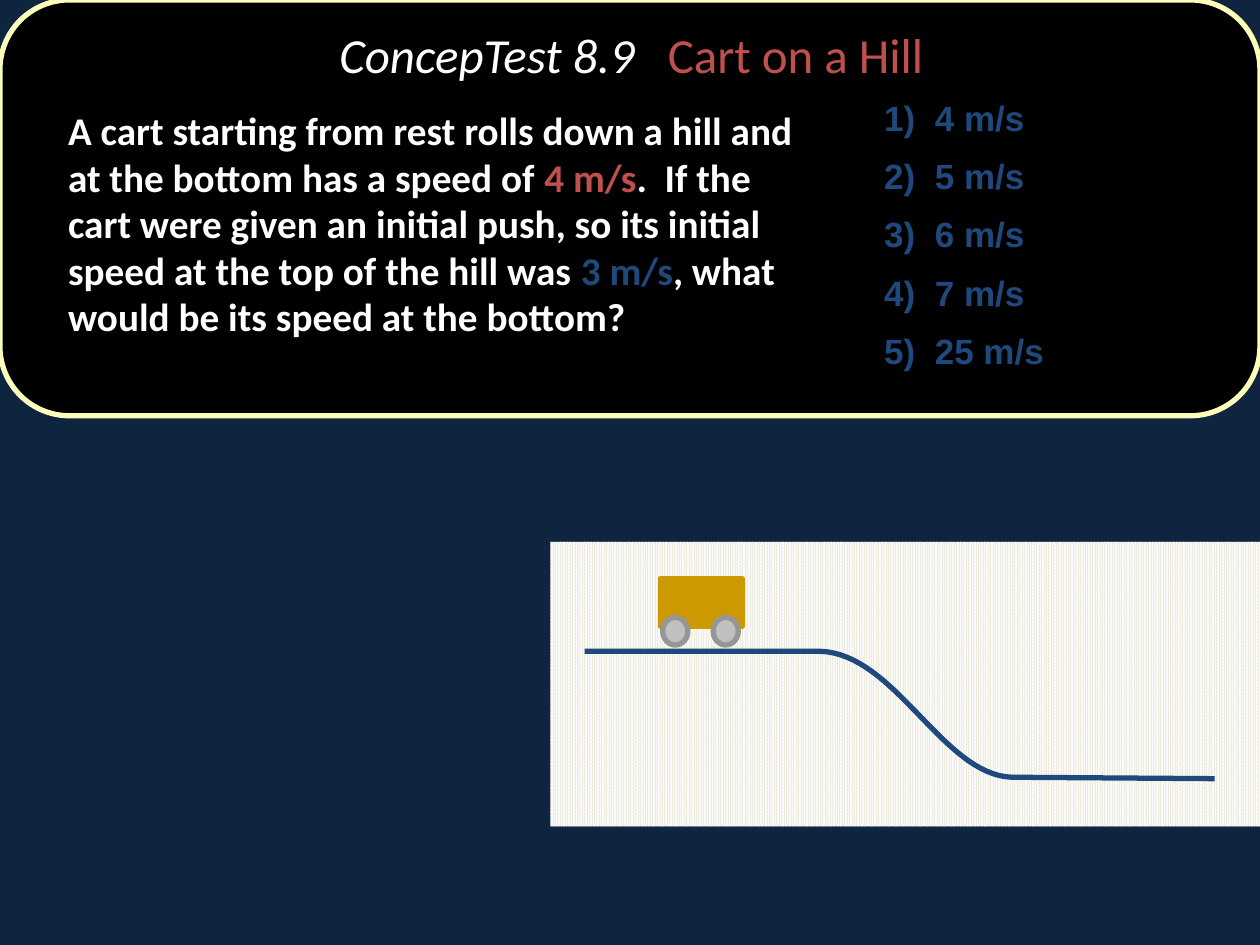
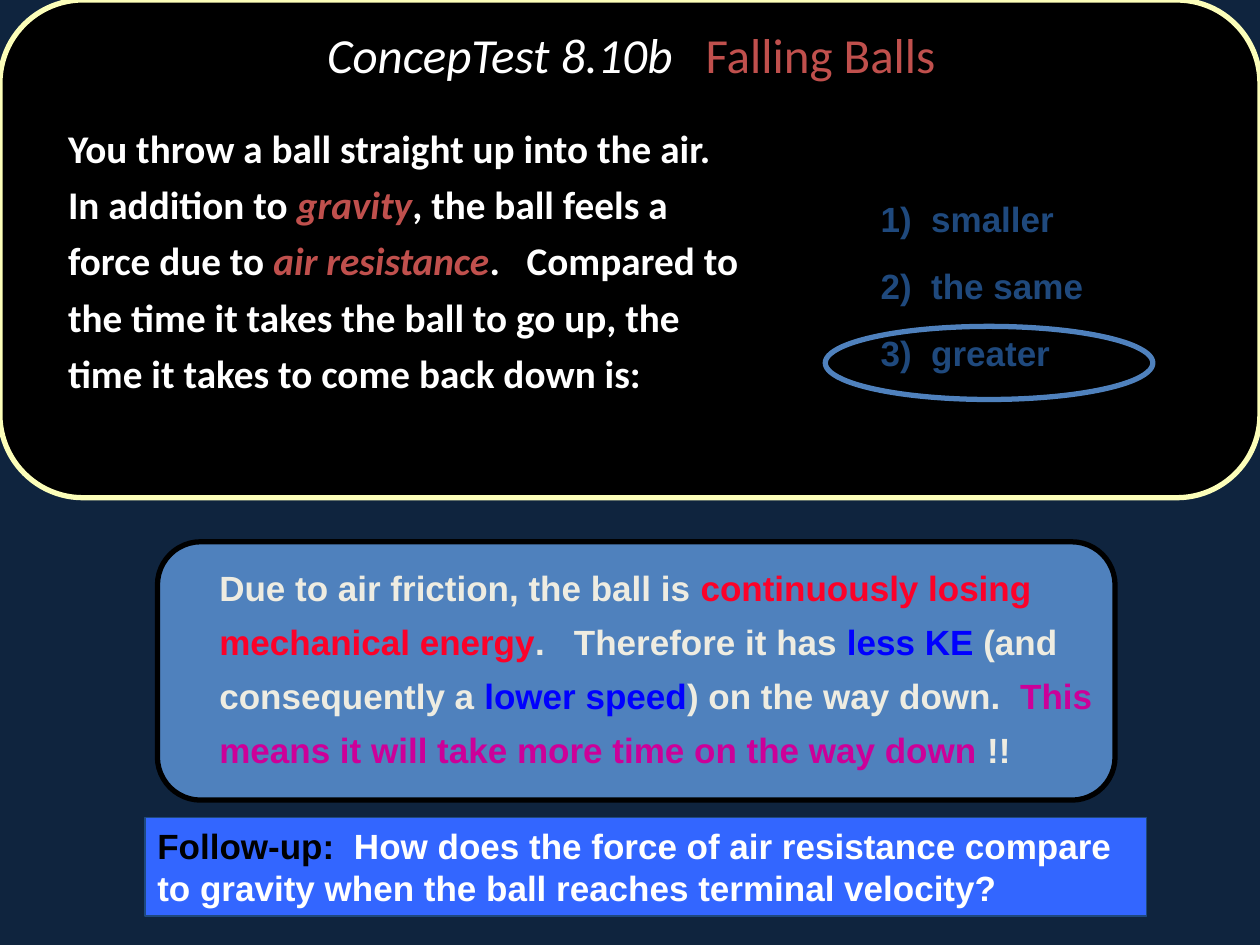
from pptx import Presentation
from pptx.dml.color import RGBColor
from pptx.enum.dml import MSO_PATTERN
from pptx.enum.shapes import MSO_SHAPE as SHAPE
from pptx.enum.text import MSO_ANCHOR as ANCHOR, PP_ALIGN as ALIGN
from pptx.util import Pt

NAVY = RGBColor(0x0F, 0x24, 0x3E)
BLACK = RGBColor(0x00, 0x00, 0x00)
WHITE = RGBColor(0xFF, 0xFF, 0xFF)
CREAM = RGBColor(0xEE, 0xEC, 0xE1)
PALE_YELLOW = RGBColor(0xFC, 0xFE, 0xB9)
BRICK = RGBColor(0xC0, 0x50, 0x4D)
DARK_BLUE = RGBColor(0x1F, 0x49, 0x7D)
MID_BLUE = RGBColor(0x4F, 0x81, 0xBD)
BRIGHT_BLUE = RGBColor(0x33, 0x66, 0xFF)
PURE_BLUE = RGBColor(0x00, 0x00, 0xFF)
RED = RGBColor(0xFC, 0x01, 0x28)
MAGENTA = RGBColor(0xCC, 0x00, 0x99)
GOLD = RGBColor(0xCC, 0x99, 0x00)
SILVER = RGBColor(0xC0, 0xC0, 0xC0)
GREY = RGBColor(0x96, 0x96, 0x96)


def draw(slide, kind, box, fill=None, line=None, weight=3):
    """Add a preset shape; box is left, top, width, height in points."""
    shape = slide.shapes.add_shape(kind, *map(Pt, box))
    shape.shadow.inherit = False
    if fill is None:
        shape.fill.background()
    else:
        shape.fill.solid()
        shape.fill.fore_color.rgb = fill
    if line is None:
        shape.line.fill.background()
    else:
        shape.line.color.rgb = line
        shape.line.width = Pt(weight)
    if kind == SHAPE.ROUNDED_RECTANGLE:
        shape.adjustments[0] = 0.167
    return shape


def write(shape, paragraphs, font, size, bold=True, align=ALIGN.LEFT,
          spacing=1.0, before=0, indent=0, anchor=ANCHOR.TOP):
    """Fill a shape with paragraphs of (text, colour, italic) runs."""
    frame = shape.text_frame
    frame.word_wrap = True
    frame.vertical_anchor = anchor
    frame.margin_left = Pt(7.2 + indent)
    for number, runs in enumerate(paragraphs):
        paragraph = frame.add_paragraph() if number else frame.paragraphs[0]
        paragraph.alignment = align
        paragraph.line_spacing = spacing
        paragraph.space_before = Pt(before)
        for text, colour, *italic in runs:
            run = paragraph.add_run()
            run.text = text
            run.font.name = font
            run.font.size = Pt(size)
            run.font.bold = bold
            run.font.italic = bool(italic)
            run.font.color.rgb = colour


prs = Presentation()
prs.slide_width, prs.slide_height = Pt(720), Pt(540)

# Each question: number, topic, panel height,
# question (box, line spacing, space before, runs),
# answers (box, line spacing, texts), circled answer
questions = [
    ("8.9", "Cart on a Hill", 237.6,
     ((0, 58.3, 464.4, 163.4), 0.99, 4.5, [
         ("A cart starting from rest rolls down a hill and at the bottom "
          "has a speed of ", WHITE),
         ("4 m/s", BRICK),
         (".  If the cart were given an initial push, so its initial speed "
          "at the top of the hill was ", WHITE),
         ("3 m/s", DARK_BLUE),
         (", what would be its speed at the bottom?", WHITE)]),
     ((498.2, 49, 187.9, 168.5), 1.1,
      ["4 m/s", "5 m/s", "6 m/s", "7 m/s", "25 m/s"]),
     None),
    ("8.10b", "Falling Balls", 284.4,
     ((0, 61.9, 433.4, 192.2), 1.2, 11.2, [
         ("You throw a ball straight up into the air.   In addition to ", WHITE),
         ("gravity", BRICK, True),
         (", the ball feels a force due to ", WHITE),
         ("air resistance", BRICK, True),
         (".   Compared to the time it takes the ball to go up, the time it "
          "takes to come back down is:", WHITE)]),
     ((496.1, 102.2, 164.2, 136.1), 1.3, ["smaller", "the same", "greater"]),
     (471.6, 186.5, 187.2, 41.8)),
]

# Shared part: background, panel, title, question and answers
slides = []
for number, topic, panel_height, question, answers, circle in questions:
    slide = prs.slides.add_slide(prs.slide_layouts[6])
    slides.append(slide)
    slide.background.fill.solid()
    slide.background.fill.fore_color.rgb = NAVY
    draw(slide, SHAPE.ROUNDED_RECTANGLE, (0, 0, 720, panel_height),
         BLACK, PALE_YELLOW)

    title = slide.shapes.add_textbox(Pt(73.4), Pt(0), Pt(574.6), Pt(66.2))
    write(title, [[(f"ConcepTest {number}   ", WHITE, True), (topic, BRICK)]],
          "Calibri", 28, bold=False, align=ALIGN.CENTER, spacing=0.9,
          anchor=ANCHOR.MIDDLE)

    box, spacing, before, runs = question
    write(slide.shapes.add_textbox(*map(Pt, box)), [runs], "Calibri", 22.4,
          spacing=spacing, before=before, indent=31.7)

    if circle:
        draw(slide, SHAPE.OVAL, circle, line=MID_BLUE)
    box, spacing, texts = answers
    write(slide.shapes.add_textbox(*map(Pt, box)),
          [[(f"{i})  {text}", DARK_BLUE)] for i, text in enumerate(texts, 1)],
          "Arial", 20, spacing=spacing, before=7)

hill_slide, ball_slide = slides

# Cart on a hill: patterned ground
ground = draw(hill_slide, SHAPE.RECTANGLE, (314.6, 309.6, 405.4, 162.7))
ground.fill.patterned()
ground.fill.pattern = MSO_PATTERN.PERCENT_90
ground.fill.fore_color.rgb = CREAM
ground.fill.back_color.rgb = WHITE

# Track: level, Bézier slope, level
slope = [(468.7, 372.2), (511.9, 373.7), (538.6, 442.8), (578.2, 444.2)]
track_points = []
STEPS = 32
for step in range(STEPS + 1):
    t = step / STEPS
    weights = ((1 - t) ** 3, 3 * t * (1 - t) ** 2, 3 * t ** 2 * (1 - t), t ** 3)
    track_points.append(tuple(
        Pt(sum(w * point[axis] for w, point in zip(weights, slope)))
        for axis in (0, 1)))
track_points.append((Pt(694.1), Pt(445)))
builder = hill_slide.shapes.build_freeform(Pt(334.1), Pt(372.2))
builder.add_line_segments(track_points, close=False)
track = builder.convert_to_shape()
track.shadow.inherit = False
track.fill.background()
track.line.color.rgb = DARK_BLUE
track.line.width = Pt(3)

# Cart with two wheels
draw(hill_slide, SHAPE.RECTANGLE, (377.3, 330.5, 46.8, 27.4), GOLD, GOLD)
for wheel_left in (378.7, 407.5):
    draw(hill_slide, SHAPE.OVAL, (wheel_left, 352.8, 14.4, 15.8), SILVER, GREY)

# Falling balls: explanation
draw(ball_slide, SHAPE.ROUNDED_RECTANGLE, (90, 309.6, 547.2, 147.6),
     MID_BLUE, BLACK)
explanation = ball_slide.shapes.add_textbox(Pt(95.8), Pt(313.2), Pt(555.1), Pt(175))
write(explanation, [[
    ("Due to air friction, the ball is ", CREAM),
    ("continuously losing mechanical energy", RED),
    (".   Therefore it has ", CREAM),
    ("less KE", PURE_BLUE),
    (" (and consequently a ", CREAM),
    ("lower speed", PURE_BLUE),
    (") on the way down.  ", CREAM),
    ("This means it will take more time on the way down", MAGENTA),
    (" !!", CREAM)]], "Arial", 20, spacing=1.29, before=7, indent=22.3)

# Falling balls: follow-up
follow_up = draw(ball_slide, SHAPE.RECTANGLE, (82.8, 467.3, 572.4, 56.2),
                 BRIGHT_BLUE, DARK_BLUE, 0.75)
write(follow_up, [[
    ("Follow-up:", BLACK),
    ("  How does the force of air resistance compare to gravity when the "
     "ball reaches terminal velocity?", WHITE)]],
    "Arial", 20, anchor=ANCHOR.MIDDLE)

prs.save("out.pptx")
